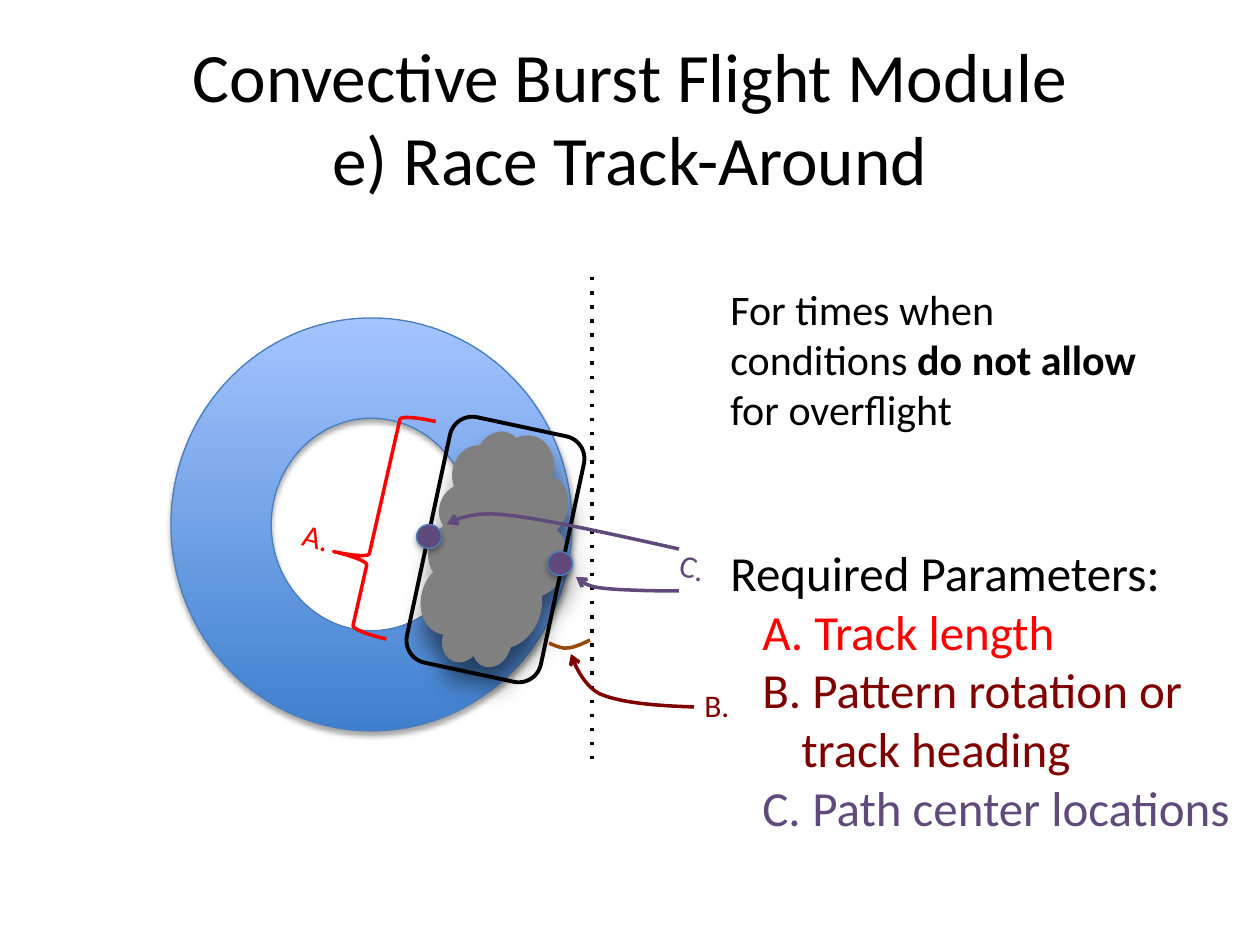
from lxml import etree
from pptx import Presentation
from pptx.dml.color import RGBColor
from pptx.enum.shapes import MSO_CONNECTOR, MSO_SHAPE
from pptx.enum.text import MSO_ANCHOR, PP_ALIGN
from pptx.oxml.ns import qn
from pptx.util import Pt

PX = 914400 / 126
STRAIGHT = MSO_CONNECTOR.STRAIGHT
MIDDLE, CENTER = MSO_ANCHOR.MIDDLE, PP_ALIGN.CENTER
FONT = "Calibri"
COLORS = {
    "black": "000000", "red": "FF0000", "maroon": "800000", "purple": "604A7B",
    "brown": "984807", "gray": "808080", "outline": "4B7EBC",
    "ring_dark": "3F80CE", "ring_light": "A4C4FF",
}
SOFT_SHADOW = (3.1, 1.8, 90, 35)    # blur, distance, direction, opacity
DEEP_SHADOW = (14.2, 11, 85, 52)


def px(value):
    return round(value * PX)


def color(name):
    return RGBColor.from_string(COLORS[name])


def add_xml(parent, tag, **attributes):
    return etree.SubElement(parent, qn(tag), {k: str(v) for k, v in attributes.items()})


def style_line(line, name, width):
    line.color.rgb = color(name)
    line.width = Pt(width)


def add_shadow(shape, blur, distance, direction, opacity):
    effects = shape._element.spPr.find(qn("a:effectLst"))
    shadow = add_xml(effects, "a:outerShdw", blurRad=Pt(blur), dist=Pt(distance),
                     dir=direction * 60000, algn="ctr", rotWithShape=0)
    shadow_color = add_xml(shadow, "a:srgbClr", val=COLORS["black"])
    add_xml(shadow_color, "a:alpha", val=opacity * 1000)


def add_preset(slide, kind, box, fill=None, line=None, width=0.75, rotation=0, shadow=None):
    shape = slide.shapes.add_shape(kind, *map(px, box))
    shape.rotation = rotation
    if fill:
        shape.fill.solid()
        shape.fill.fore_color.rgb = color(fill)
    else:
        shape.fill.background()
    if line:
        style_line(shape.line, line, width)
    else:
        shape.line.fill.background()
    shape.shadow.inherit = False
    if shadow:
        add_shadow(shape, *shadow)
    return shape


def bezier(start, first, second, end, steps=16):
    """Points after the start of a cubic curve."""
    for step in range(1, steps + 1):
        t = step / steps
        weights = ((1 - t) ** 3, 3 * t * (1 - t) ** 2, 3 * t * t * (1 - t), t ** 3)
        yield tuple(sum(w * p[axis] for w, p in zip(weights, (start, first, second, end)))
                    for axis in (0, 1))


def add_curve(slide, left, top, points, name, arrow=True):
    # Points in EMU keep the curve smooth
    points = [(px(left + x), px(top + y)) for x, y in points]
    builder = slide.shapes.build_freeform(*points[0])
    for i in range(0, len(points) - 1, 3):
        builder.add_line_segments(bezier(*points[i:i + 4]), close=False)
    shape = builder.convert_to_shape()
    shape.fill.background()
    style_line(shape.line, name, 2)
    shape.shadow.inherit = False
    if arrow:
        add_xml(shape.line._get_or_add_ln(), "a:tailEnd", type="arrow")


def add_run(paragraph, text, size, name="black", bold=False):
    run = paragraph.add_run()
    run.text = text
    run.font.name, run.font.size, run.font.bold = FONT, Pt(size), bold
    run.font.color.rgb = color(name)


def add_text_frame(slide, box, wrap=True, rotation=0):
    text_box = slide.shapes.add_textbox(*map(px, box))
    text_box.rotation = rotation
    text_box.text_frame.word_wrap = wrap
    return text_box.text_frame


def add_title(slide, box):
    frame = add_text_frame(slide, box)
    frame.vertical_anchor = MIDDLE
    paragraph = frame.paragraphs[0]
    paragraph.alignment = CENTER
    add_run(paragraph, "Convective Burst Flight Module", 39.6)
    paragraph.add_line_break()
    add_run(paragraph, "e) Race Track-Around", 39.6)


def add_parameters(slide, box):
    frame = add_text_frame(slide, box)
    add_run(frame.paragraphs[0], "Required Parameters:", 28)
    for text, name in ((" Track length", "red"),
                       (" Pattern rotation or track heading", "maroon"),
                       (" Path center locations", "purple")):
        paragraph = frame.add_paragraph()
        properties = paragraph._p.get_or_add_pPr()
        properties.set("marL", str(px(71)))
        properties.set("indent", str(px(-39)))
        add_xml(properties, "a:buFont", typeface="+mj-lt")
        add_xml(properties, "a:buAutoNum", type="alphaUcPeriod")
        add_run(paragraph, text, 28, name)


def add_condition(slide, box):
    paragraph = add_text_frame(slide, box).paragraphs[0]
    add_run(paragraph, "For times when conditions ", 24)
    add_run(paragraph, "do not allow ", 24, bold=True)
    add_run(paragraph, "for overflight", 24)


def add_diagram(slide, left, top):
    def at(x, y, width, height):
        return left + x, top + y, width, height

    # Eyewall ring and convective burst
    ring = add_preset(slide, MSO_SHAPE.DONUT, at(0, 41, 401, 413), line="outline",
                      shadow=SOFT_SHADOW)
    ring.fill.gradient()
    ring.fill.gradient_angle = 90
    for stop, name, position in zip(ring.fill.gradient_stops, ("ring_dark", "ring_light"), (0, 1)):
        stop.color.rgb = color(name)
        stop.position = position
    add_preset(slide, MSO_SHAPE.CLOUD, at(207, 203, 239, 140), fill="gray",
               rotation=289.5, shadow=DEEP_SHADOW)

    # Track length brace
    brace = add_preset(slide, MSO_SHAPE.LEFT_BRACE, at(170, 134, 71, 223), line="red",
                       width=2, rotation=12.8)
    brace.adjustments[0], brace.adjustments[1] = 0.08, 0.33
    brace._element.spPr.find(qn("a:xfrm")).set("flipV", "1")

    # Dotted reference line and rotation angle
    reference = slide.shapes.add_connector(
        STRAIGHT, *map(px, (left + 421, top, left + 421, top + 493)))
    style_line(reference.line, "black", 2)
    add_xml(reference.line._get_or_add_ln(), "a:prstDash", val="dot")
    add_xml(reference._element.spPr, "a:effectLst")
    add_curve(slide, left, top, [(419, 363), (411, 367), (402, 371), (396, 371),
                                 (390, 372), (378, 366), (378, 366)], "brown", arrow=False)

    # Race track and its path centers
    add_preset(slide, MSO_SHAPE.ROUNDED_RECTANGLE, at(199, 204, 251, 137), line="black",
               width=2.25, rotation=282.1)
    for x, y in ((377, 274), (246, 247)):
        add_preset(slide, MSO_SHAPE.OVAL, at(x, y, 24, 25), fill="purple", line="outline",
                   rotation=262.1, shadow=SOFT_SHADOW)

    # Arrows from the labels
    for name, points in (
        ("maroon", [(523, 430), (487, 429), (450, 426), (429, 417),
                    (409, 407), (400, 377), (400, 377)]),
        ("purple", [(508, 272), (441, 257), (373, 242), (336, 238),
                    (296, 233), (276, 247), (276, 247)]),
        ("purple", [(508, 314), (477, 314), (446, 313), (430, 311),
                    (412, 309), (405, 300), (405, 300)]),
    ):
        add_curve(slide, left, top, points, name)

    # Letter labels, with the right inset removed so each stays on one line
    for text, x, y, name, rotation in (("A.", 120, 235, "red", 14.4),
                                       ("B.", 521, 403, "maroon", 0),
                                       ("C.", 497, 265, "purple", 14.4)):
        frame = add_text_frame(slide, at(x, y, 51, 50), wrap=False, rotation=rotation)
        frame.margin_right = 0
        paragraph = frame.paragraphs[0]
        add_run(paragraph, text, 18, name)


def main():
    presentation = Presentation()
    presentation.slide_width, presentation.slide_height = px(1260), px(945)
    slide = presentation.slides.add_slide(presentation.slide_layouts[6])
    add_title(slide, (63, 37, 1134, 158))
    add_parameters(slide, (718, 536, 539, 310))
    add_diagram(slide, 171, 277)
    add_condition(slide, (718, 277, 465, 165))
    presentation.save("out.pptx")


if __name__ == "__main__":
    main()
